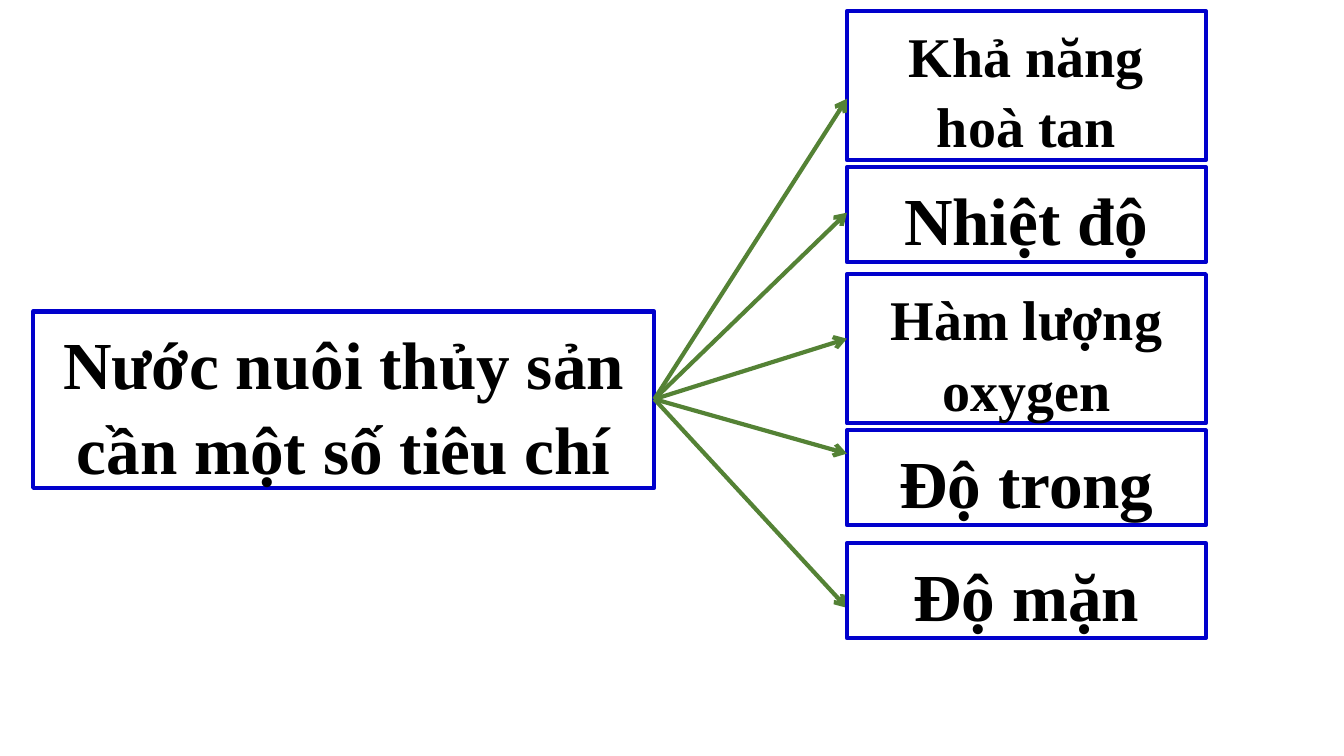
import pptx
import pptx.util
import pptx.dml.color
import pptx.enum.shapes
import pptx.enum.text
import pptx.oxml.ns
import lxml.etree

PX = 9144  # 100 px to the inch
THEME = {
    "font": "Times New Roman",
    "text": pptx.dml.color.RGBColor.from_string("000000"),
    "border": pptx.dml.color.RGBColor.from_string("0000CC"),
    "arrow": pptx.dml.color.RGBColor.from_string("548235"),
    "line": pptx.util.Pt(3),
    "large": pptx.util.Pt(48),
    "medium": pptx.util.Pt(40),
}

prs = pptx.Presentation()
prs.slide_width, prs.slide_height = 1333 * PX, 750 * PX
s = prs.slides.add_slide(prs.slide_layouts[6])


def add_box(x, y, w, h, text, size):
    sp = s.shapes.add_shape(pptx.enum.shapes.MSO_SHAPE.RECTANGLE,
                            x * PX, y * PX, w * PX, h * PX)
    sp.shadow.inherit = False
    sp.fill.background()
    sp.line.color.rgb = THEME["border"]
    sp.line.width = THEME["line"]
    tf = sp.text_frame
    tf.text = text
    tf.word_wrap = True
    tf.auto_size = pptx.enum.text.MSO_AUTO_SIZE.SHAPE_TO_FIT_TEXT
    tf.vertical_anchor = pptx.enum.text.MSO_ANCHOR.TOP
    tf.margin_left = tf.margin_right = 13 * PX
    tf.margin_top = tf.margin_bottom = 7 * PX
    p = tf.paragraphs[0]
    p.alignment = pptx.enum.text.PP_ALIGN.CENTER
    p.line_spacing = 1.05
    f = p.runs[0].font
    f.name, f.size, f.bold = THEME["font"], THEME[size], True
    f.color.rgb = THEME["text"]


def add_arrow(x1, y1, x2, y2):
    c = s.shapes.add_connector(pptx.enum.shapes.MSO_CONNECTOR.STRAIGHT,
                               x1 * PX, y1 * PX, x2 * PX, y2 * PX)
    c.line.color.rgb = THEME["arrow"]
    c.line.width = THEME["line"]
    qn = pptx.oxml.ns.qn
    lxml.etree.SubElement(c.line._get_or_add_ln(), qn("a:tailEnd"), type="arrow")
    lxml.etree.SubElement(c._element.spPr, qn("a:effectLst"))


# Main topic
add_box(33, 309, 616, 175, "Nước nuôi thủy sản cần một số tiêu chí", "large")

# Criteria: top, height, text, size, arrow tip
criteria = [
    (11, 148, "Khả năng hoà tan", "medium", 98),
    (166, 94, "Nhiệt độ", "large", 211),
    (272, 148, "Hàm lượng oxygen", "medium", 336),
    (427, 94, "Độ trong", "large", 450),
    (539, 94, "Độ mặn", "large", 603),
]
for top, height, text, size, tip in criteria[:-1]:
    add_box(840, top, 356, height, text, size)

# Arrows from the topic to each criterion
for *box, tip in criteria:
    add_arrow(649, 396, 840, tip)

# The last criterion lies over its arrow tip
top, height, text, size, tip = criteria[-1]
add_box(840, top, 356, height, text, size)

prs.save("out.pptx")
